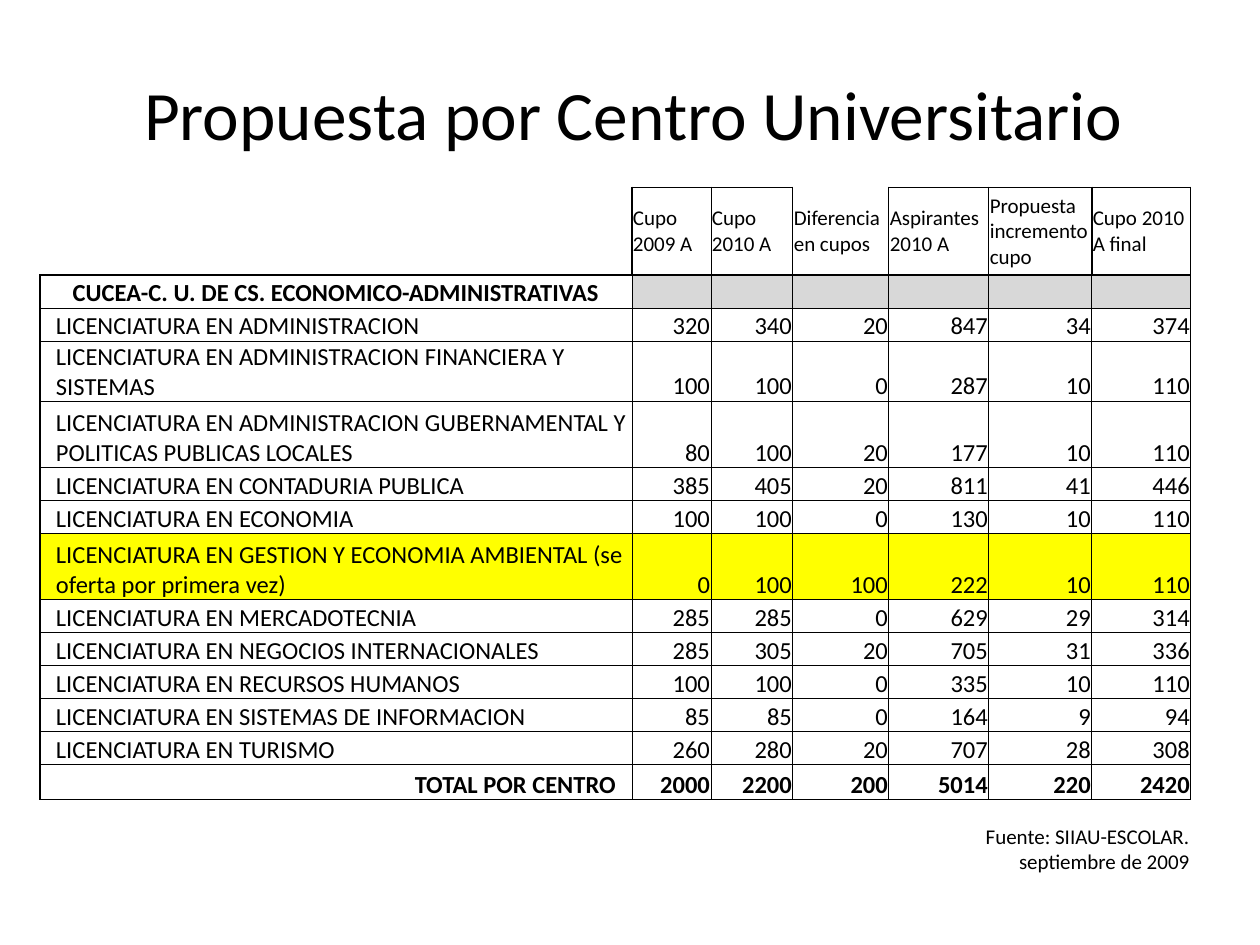
import pptx
import pptx.util
import pptx.dml.color
import pptx.enum.text
import pptx.oxml.ns
from lxml import etree

ALIGN = pptx.enum.text.PP_ALIGN
ANCHOR = pptx.enum.text.MSO_ANCHOR
BLACK = pptx.dml.color.RGBColor(0, 0, 0)
GRAY = pptx.dml.color.RGBColor(0xD8, 0xD8, 0xD8)
YELLOW = pptx.dml.color.RGBColor(0xFF, 0xFF, 0)
FONT = "Calibri"
PX = 914400 // 126
PLAIN_TABLE = "{2D5ABB26-0587-4C30-8999-92F81FD0307C}"

# Content
TITLE = "Propuesta por Centro Universitario"
SOURCE = ["Fuente: SIIAU-ESCOLAR.", "septiembre de 2009"]
HEADER = ["", "Cupo 2009 A", "Cupo 2010 A", "Diferencia en cupos",
          "Aspirantes 2010 A", "Propuesta incremento cupo", "Cupo 2010 A final"]
CENTER = ["CUCEA-C. U. DE CS. ECONOMICO-ADMINISTRATIVAS"] + [""] * 6
DEGREES = [
    ["LICENCIATURA EN ADMINISTRACION", 320, 340, 20, 847, 34, 374],
    ["LICENCIATURA EN ADMINISTRACION FINANCIERA Y SISTEMAS", 100, 100, 0, 287, 10, 110],
    ["LICENCIATURA EN ADMINISTRACION GUBERNAMENTAL Y POLITICAS PUBLICAS LOCALES",
     80, 100, 20, 177, 10, 110],
    ["LICENCIATURA EN CONTADURIA PUBLICA", 385, 405, 20, 811, 41, 446],
    ["LICENCIATURA EN ECONOMIA", 100, 100, 0, 130, 10, 110],
    ["LICENCIATURA EN GESTION Y ECONOMIA AMBIENTAL (se oferta por primera vez)",
     0, 100, 100, 222, 10, 110],
    ["LICENCIATURA EN MERCADOTECNIA", 285, 285, 0, 629, 29, 314],
    ["LICENCIATURA EN NEGOCIOS INTERNACIONALES", 285, 305, 20, 705, 31, 336],
    ["LICENCIATURA EN RECURSOS HUMANOS", 100, 100, 0, 335, 10, 110],
    ["LICENCIATURA EN SISTEMAS DE INFORMACION", 85, 85, 0, 164, 9, 94],
    ["LICENCIATURA EN TURISMO", 260, 280, 20, 707, 28, 308],
]
TOTAL = ["TOTAL POR CENTRO", 2000, 2200, 200, 5014, 220, 2420]
ROWS = [HEADER, CENTER] + DEGREES + [TOTAL]
LAST_ROW = len(ROWS) - 1
NEW_DEGREE_ROW = 7
COLUMN_WIDTHS = [592, 79, 82, 96, 100, 103, 99]
ROW_HEIGHTS = [88, 33, 33, 60, 67, 33, 33, 66, 33, 33, 33, 33, 33, 35]


def px(*lengths):
    return [length * PX for length in lengths]


def write(frame, lines, size, bold=False, align=ALIGN.LEFT):
    for index, line in enumerate(lines):
        paragraph = frame.paragraphs[0] if index == 0 else frame.add_paragraph()
        paragraph.alignment = align
        if not line:  # keeps an empty cell from growing its row
            paragraph._p.get_or_add_endParaRPr().set("sz", str(size * 100))
            continue
        run = paragraph.add_run()
        run.text = line
        run.font.name = FONT
        run.font.size = pptx.util.Pt(size)
        run.font.bold = bold
        run.font.color.rgb = BLACK


def set_borders(cell, widths):
    """Draw the left, right, top and bottom borders; width 0 means none."""
    properties = cell._tc.get_or_add_tcPr()
    for side, width in zip("LRTB", widths):
        line = etree.SubElement(properties, pptx.oxml.ns.qn(f"a:ln{side}"))
        line.set("w", str(pptx.util.Pt(width)))
        if width:
            fill = etree.SubElement(line, pptx.oxml.ns.qn("a:solidFill"))
            etree.SubElement(fill, pptx.oxml.ns.qn("a:srgbClr")).set("val", str(BLACK))
        else:
            etree.SubElement(line, pptx.oxml.ns.qn("a:noFill"))


def border_widths(row, column):
    if row == 0:
        if column == 0:
            return 0, 1, 0, 1
        left = 1 if column in (1, 6) else 0.5
        right = 1 if column == 5 else 0.5
        return left, right, 0 if column == 3 else 0.5, 1
    return (1 if column == 0 else 0.5, 0.5,
            1 if row == 1 else 0.5, 1 if row == LAST_ROW else 0.5)


def format_cell(cell, row, column):
    is_degree = 1 < row < LAST_ROW
    cell.margin_left, cell.margin_right, cell.margin_top, cell.margin_bottom = px(
        16 if column == 0 and is_degree else 1,
        16 if column == 0 and row == LAST_ROW else 1, 1, 0)
    cell.vertical_anchor = ANCHOR.MIDDLE if row == 0 else ANCHOR.BOTTOM
    set_borders(cell, border_widths(row, column))
    if row == 1 and column > 0 or row == NEW_DEGREE_ROW:
        cell.fill.solid()
        cell.fill.fore_color.rgb = GRAY if row == 1 else YELLOW
    else:
        cell.fill.background()
    if row == 0 or column == 0 and is_degree:
        align = ALIGN.LEFT
    else:
        align = ALIGN.CENTER if row == 1 else ALIGN.RIGHT
    write(cell.text_frame, [str(ROWS[row][column])], 12 if row == 0 else 14,
          bold=row in (1, LAST_ROW), align=align)


def main():
    presentation = pptx.Presentation()
    presentation.slide_width, presentation.slide_height = px(1260, 945)
    slide = presentation.slides.add_slide(presentation.slide_layouts[5])

    # Title
    title = slide.shapes.title
    title.left, title.top, title.width, title.height = px(98, 39, 1071, 147)
    title.text_frame.vertical_anchor = ANCHOR.MIDDLE
    write(title.text_frame, [TITLE], 39.6, align=ALIGN.CENTER)

    # Source note
    note = slide.shapes.add_textbox(*px(876, 817, 326, 63))
    note.text_frame.word_wrap = True
    write(note.text_frame, SOURCE, 12, align=ALIGN.RIGHT)

    # Table of places by degree
    table = slide.shapes.add_table(
        len(ROWS), len(HEADER),
        *px(40, 187, sum(COLUMN_WIDTHS), sum(ROW_HEIGHTS))).table
    table.first_row = table.horz_banding = False
    table._tbl.tblPr.find(pptx.oxml.ns.qn("a:tableStyleId")).text = PLAIN_TABLE
    for column, width in zip(table.columns, px(*COLUMN_WIDTHS)):
        column.width = width
    for row, height in zip(table.rows, px(*ROW_HEIGHTS)):
        row.height = height
    for row in range(len(ROWS)):
        for column in range(len(HEADER)):
            format_cell(table.cell(row, column), row, column)

    presentation.save("out.pptx")


if __name__ == "__main__":
    main()
